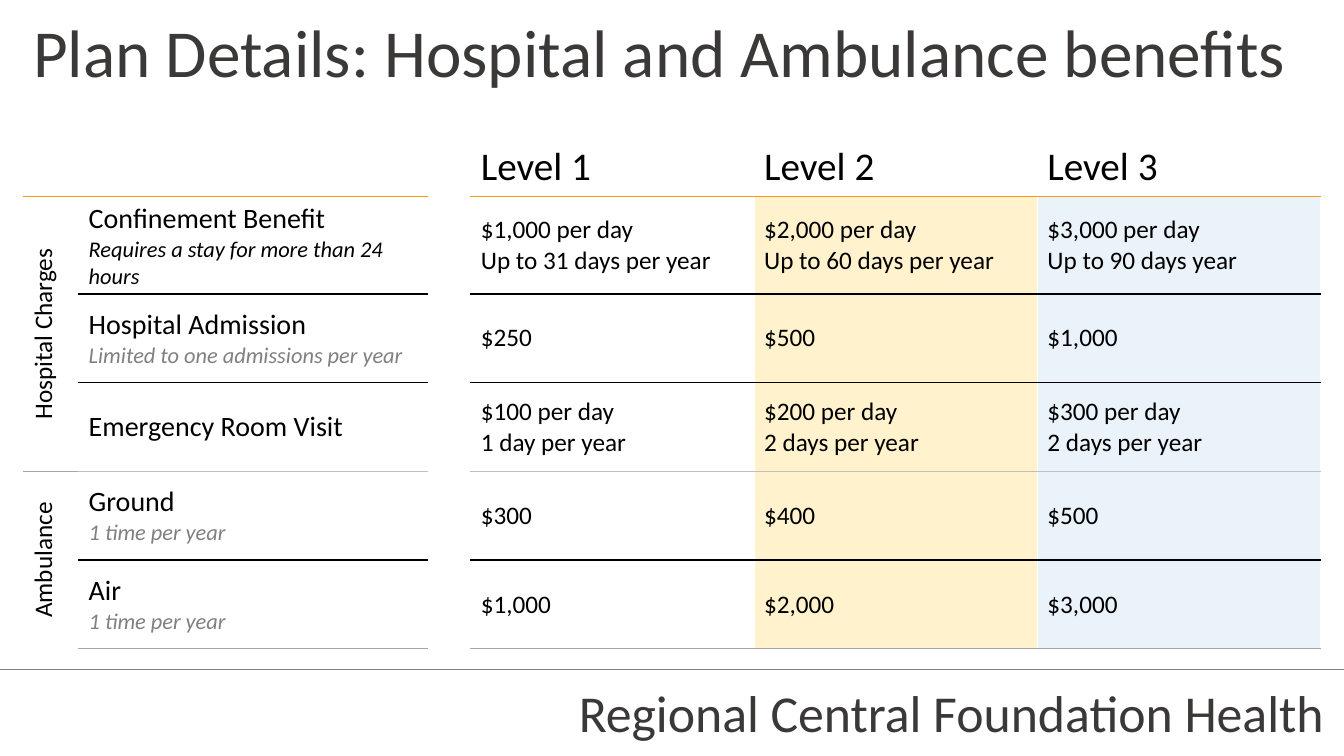
from dataclasses import dataclass

from lxml.etree import SubElement
from pptx import Presentation
from pptx.dml.color import RGBColor
from pptx.enum.shapes import MSO_CONNECTOR
from pptx.enum.text import MSO_ANCHOR as Anchor, PP_ALIGN as Align
from pptx.oxml import parse_xml
from pptx.oxml.ns import nsdecls, qn
from pptx.slide import Slide
from pptx.table import Table, _Cell as Cell
from pptx.text.text import TextFrame
from pptx.util import Inches, Pt

FONT = "Calibri"
COLORS = {
    "white": "FFFFFF", "black": "000000", "heading": "3B3838", "gray": "808080",
    "orange": "F8981D", "light_rule": "BFBFBF", "group_rule": "A6A6A6",
    "gold": "FFF2CC", "blue": "EAF2FA",
}
COLUMN_WIDTHS = (0.55, 3.47, 0.42, 2.81, 2.81, 2.81)
ROW_HEIGHTS = (0.82,) + (0.88,) * 5
GAP_COLUMN, FIRST_LEVEL = 2, 3
LEVEL_FILLS = ("white", "gold", "blue")
# Colour of the rule below each row
RULES = ("orange", "black", "black", "light_rule", "black", "group_rule")


@dataclass(frozen=True)
class Line:
    text: str
    size: int
    color: str = "black"
    italic: bool = False
    align: Align = Align.LEFT


@dataclass(frozen=True)
class Benefit:
    name: str
    levels: tuple[str, str, str]
    note: str = ""
    note_color: str = "gray"


@dataclass(frozen=True)
class Group:
    name: str
    first_row: int
    last_row: int


@dataclass(frozen=True)
class Heading:
    line: Line
    left: float
    top: float
    width: float
    height: float = 1.25


BENEFITS = (
    Benefit("Confinement Benefit",
            ("$1,000 per day\nUp to 31 days per year",
             "$2,000 per day\nUp to 60 days per year",
             "$3,000 per day\nUp to 90 days year"),
            "Requires a stay for more than 24 hours", "black"),
    Benefit("Hospital Admission", ("$250", "$500", "$1,000"),
            "Limited to one admissions per year"),
    Benefit("Emergency Room Visit",
            ("$100 per day\n1 day per year",
             "$200 per day\n2 days per year",
             "$300 per day\n2 days per year")),
    Benefit("Ground", ("$300", "$400", "$500"), "1 time per year"),
    Benefit("Air", ("$1,000", "$2,000", "$3,000"), "1 time per year"),
)
GROUPS = (Group("Hospital Charges", 1, 3), Group("Ambulance", 4, 5))
HEADINGS = (
    Heading(Line("Regional Central Foundation Health", 37, "heading", align=Align.RIGHT),
            5.35, 6.44, 7.88),
    Heading(Line("Plan Details: Hospital and Ambulance benefits", 48, "heading"),
            0.23, -0.12, 12.86),
)


def rgb(name: str) -> RGBColor:
    return RGBColor.from_string(COLORS[name])


def write(frame: TextFrame, lines: list[Line]) -> None:
    for index, line in enumerate(lines):
        paragraph = frame.add_paragraph() if index else frame.paragraphs[0]
        paragraph.text = line.text
        paragraph.alignment = line.align
        font = paragraph.font
        font.name, font.size = FONT, Pt(line.size)
        font.italic, font.color.rgb = line.italic, rgb(line.color)


def fill_cell(cell: Cell, lines: list[Line], anchor: Anchor = Anchor.MIDDLE) -> None:
    write(cell.text_frame, lines)
    cell.vertical_anchor = anchor


def rule_below(row: int, column: int) -> str:
    if row < 0 or column == GAP_COLUMN:
        return "white"
    if column == 0:
        return {"black": "white", "light_rule": "group_rule"}.get(RULES[row], RULES[row])
    return RULES[row]


def style_cell(cell: Cell, row: int, column: int) -> None:
    is_level = row > 0 and column >= FIRST_LEVEL
    cell.fill.solid()
    cell.fill.fore_color.rgb = rgb(LEVEL_FILLS[column - FIRST_LEVEL] if is_level else "white")
    edges = {"lnL": "white", "lnR": "white",
             "lnT": rule_below(row - 1, column), "lnB": rule_below(row, column)}
    properties = cell._tc.get_or_add_tcPr()
    for position, (edge, color) in enumerate(edges.items()):
        properties.insert(position, parse_xml(
            f'<a:{edge} {nsdecls("a")} w="12700"><a:solidFill>'
            f'<a:srgbClr val="{COLORS[color]}"/></a:solidFill></a:{edge}>'))


def add_benefit_table(slide: Slide) -> Table:
    frame = slide.shapes.add_table(
        len(ROW_HEIGHTS), len(COLUMN_WIDTHS), Inches(0.23), Inches(1.13),
        Inches(sum(COLUMN_WIDTHS)), Inches(sum(ROW_HEIGHTS)))
    table = frame.table
    table.first_row = table.horz_banding = False
    for column, width in zip(table.columns, COLUMN_WIDTHS):
        column.width = Inches(width)
    for row, height in zip(table.rows, ROW_HEIGHTS):
        row.height = Inches(height)
    for row in range(len(ROW_HEIGHTS)):
        for column in range(len(COLUMN_WIDTHS)):
            style_cell(table.cell(row, column), row, column)

    # Level headers
    for level in range(len(LEVEL_FILLS)):
        fill_cell(table.cell(0, FIRST_LEVEL + level),
                  [Line(f"Level {level + 1}", 28)], Anchor.BOTTOM)

    # Benefits and their amounts
    for row, benefit in enumerate(BENEFITS, start=1):
        lines = [Line(benefit.name, 20)]
        if benefit.note:
            lines.append(Line(benefit.note, 16, benefit.note_color, italic=True))
        fill_cell(table.cell(row, 1), lines)
        for column, amount in enumerate(benefit.levels, start=FIRST_LEVEL):
            fill_cell(table.cell(row, column),
                      [Line(text, 18) for text in amount.split("\n")])

    # Rotated group names
    for group in GROUPS:
        cell = table.cell(group.first_row, 0)
        cell.merge(table.cell(group.last_row, 0))
        fill_cell(cell, [Line(group.name, 18, align=Align.CENTER)])
        cell._tc.get_or_add_tcPr().set("vert", "vert270")
    return table


def add_heading(slide: Slide, heading: Heading) -> None:
    box = slide.shapes.add_textbox(Inches(heading.left), Inches(heading.top),
                                   Inches(heading.width), Inches(heading.height))
    box.text_frame.word_wrap = True
    box.text_frame.vertical_anchor = Anchor.MIDDLE
    write(box.text_frame, [heading.line])


def add_footer_rule(slide: Slide) -> None:
    rule = slide.shapes.add_connector(MSO_CONNECTOR.STRAIGHT, Inches(-0.04), Inches(6.64),
                                      Inches(13.47), Inches(6.64))
    rule.line.color.rgb = rgb("gray")
    rule.line.width = Pt(0.5)
    SubElement(rule._element.spPr, qn("a:effectLst"))


def main() -> None:
    presentation = Presentation()
    presentation.slide_width, presentation.slide_height = Inches(13.33), Inches(7.5)
    slide = presentation.slides.add_slide(presentation.slide_layouts[6])
    add_footer_rule(slide)
    for heading in HEADINGS:
        add_heading(slide, heading)
    add_benefit_table(slide)
    presentation.save("out.pptx")


if __name__ == "__main__":
    main()
